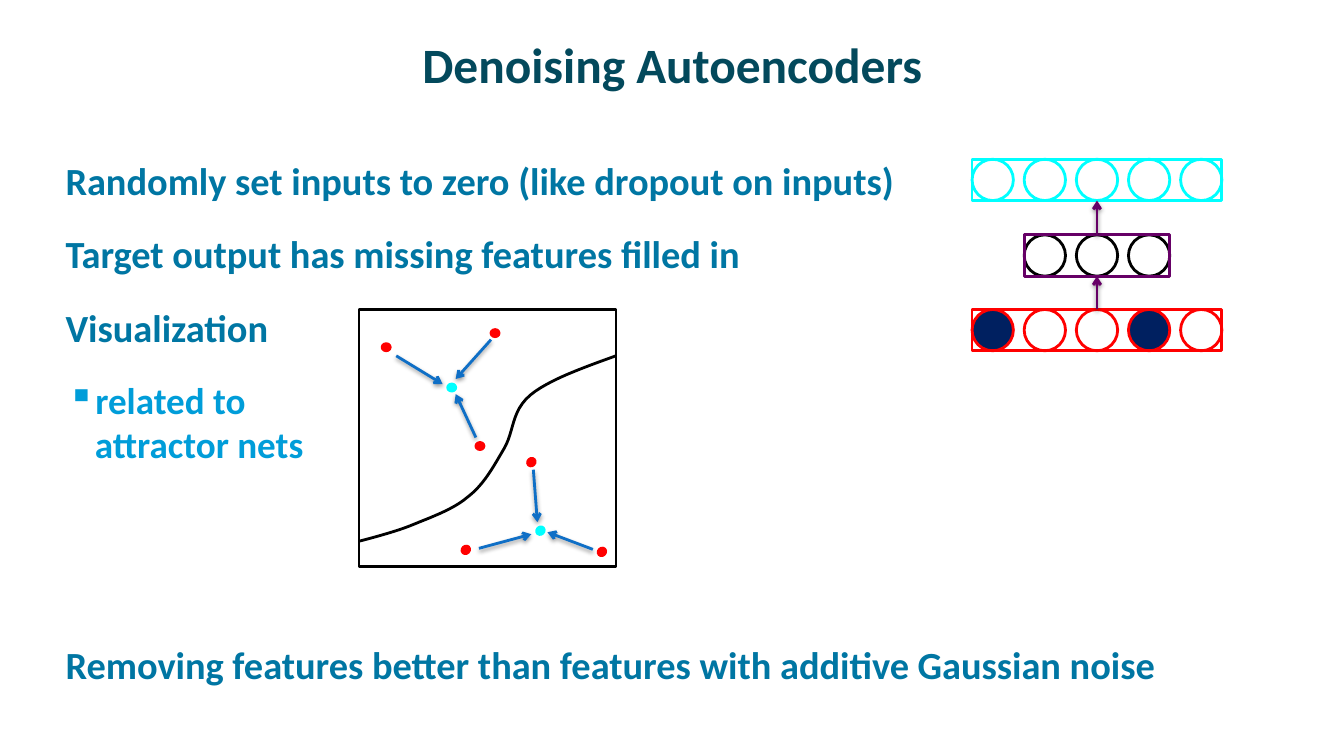
from lxml import etree
from pptx import Presentation
from pptx.dml.color import RGBColor
from pptx.enum import shapes, text
from pptx.oxml import ns
from pptx.util import Inches, Pt

TITLE = "Denoising Autoencoders"
HEADING, SUBPOINT = ("0076A3", 27.4), ("009DD9", 26.5)
# text, (colour, size), space before, bullet
POINTS = [
    ("Randomly set inputs to zero (like dropout on inputs)", HEADING, 0, None),
    ("Target output has missing features filled in", HEADING, 19.5, None),
    ("Visualization", HEADING, 19.5, None),
    ("related to\nattractor nets", SUBPOINT, 19.5, "▪"),
    ("Removing features better than features with additive Gaussian noise",
     HEADING, 125, None),
]

WHITE, BLACK, RED, CYAN = "FFFFFF", "000000", "FF0000", "00FFFF"
NAVY, PURPLE, BLUE = "002060", "660066", "0F6FC6"

PLOT = (3.56, 3.07, 2.55, 2.55)
BASINS = [
    {"attractor": (4.44, 3.81), "angle": 0,
     "noisy": [(4.72, 4.39), (4.87, 3.27), (3.79, 3.41)],
     "pulls": [((4.87, 3.37), (4.52, 3.76)), ((4.72, 4.34), (4.52, 3.91)),
               ((3.93, 3.53), (4.39, 3.81))]},
    {"attractor": (5.32, 5.23), "angle": -45,
     "noisy": [(5.93, 5.44), (5.23, 4.55), (4.58, 5.42)],
     "pulls": [((5.29, 4.66), (5.33, 5.18)), ((5.88, 5.45), (5.43, 5.28)),
               ((4.75, 5.44), (5.27, 5.3))]},
]
DOT = (0.08, 0.07)
BOUNDARY_START = (6.11, 3.53)
BOUNDARY_CURVES = [
    ((5.78, 3.65), (5.44, 3.77), (5.26, 3.92)),
    ((5.07, 4.08), (5.1, 4.28), (5, 4.45)),
    ((4.9, 4.62), (4.8, 4.81), (4.64, 4.93)),
    ((4.49, 5.06), (4.25, 5.14), (4.06, 5.22)),
    ((3.88, 5.29), (3.56, 5.37), (3.56, 5.37)),
]
CURVE_STEPS = 12

# top, unit line, box line, fills of the units
LAYERS = [
    (3.07, RED, RED, [NAVY, WHITE, WHITE, NAVY, WHITE]),
    (2.33, BLACK, PURPLE, [WHITE] * 3),
    (1.58, CYAN, CYAN, [WHITE] * 5),
]
NETWORK_CENTER, UNIT, UNIT_PITCH = 10.88, 0.41, 0.517


def rgb(hex_color):
    return RGBColor.from_string(hex_color)


def add_text(frame, content, color, size, first=False, before=0,
             left=0, hanging=0, bullet=None, align=text.PP_ALIGN.LEFT):
    """Add one paragraph; a line feed in content becomes a line break."""
    para = frame.paragraphs[0] if first else frame.add_paragraph()
    para.text = content
    para.alignment = align
    para.space_before = Pt(before)
    props = para._p.get_or_add_pPr()
    props.set("marL", str(Inches(left)))
    props.set("indent", str(Inches(-hanging)))
    if bullet:
        etree.SubElement(props, ns.qn("a:buChar")).set("char", bullet)
    for run in para.runs:
        run.font.name, run.font.size, run.font.bold = "Calibri", Pt(size), True
        run.font.color.rgb = rgb(color)


def add_frame(slide, box, anchor):
    frame = slide.shapes.add_textbox(*map(Inches, box)).text_frame
    frame.word_wrap = True
    frame.vertical_anchor = anchor
    frame.margin_left = frame.margin_right = Inches(0.11)
    frame.margin_top = frame.margin_bottom = Inches(0.06)
    return frame


def style(shape, line, fill=None):
    shape.shadow.inherit = False
    shape.line.color.rgb = rgb(line)
    shape.line.width = Pt(2)
    if fill:
        shape.fill.solid()
        shape.fill.fore_color.rgb = rgb(fill)
    else:
        shape.fill.background()


def add_outline(group, kind, box, line, fill=None, angle=0):
    shape = group.shapes.add_shape(kind, *map(Inches, box))
    style(shape, line, fill)
    shape.rotation = angle


def add_arrow(group, start, end, color):
    """Add an arrow that keeps the theme's soft connector shadow."""
    arrow = group.shapes.add_connector(
        shapes.MSO_CONNECTOR.STRAIGHT, *map(Inches, start + end))
    arrow.line.color.rgb = rgb(color)
    arrow.line.width = Pt(2)
    tip = etree.SubElement(arrow.line._get_or_add_ln(), ns.qn("a:tailEnd"))
    tip.set("type", "arrow")


def curve_points(start, curves):
    """Yield points along a chain of cubic Bezier curves."""
    for a, b, end in curves:
        for step in range(1, CURVE_STEPS + 1):
            t = step / CURVE_STEPS
            s = 1 - t
            yield tuple(
                Inches(s**3 * p + 3 * s * s * t * q + 3 * s * t * t * r + t**3 * e)
                for p, q, r, e in zip(start, a, b, end))
        start = end


def draw_attractors(slide):
    group = slide.shapes.add_group_shape()
    oval = shapes.MSO_SHAPE.OVAL
    add_outline(group, shapes.MSO_SHAPE.RECTANGLE, PLOT, BLACK, WHITE)
    for basin in BASINS:
        angle = basin["angle"]
        add_outline(group, oval, basin["attractor"] + DOT, CYAN, CYAN, angle)
        for noisy in basin["noisy"]:
            add_outline(group, oval, noisy + DOT, RED, RED, angle)
        for start, end in basin["pulls"]:
            add_arrow(group, start, end, BLUE)
    builder = group.shapes.build_freeform(*map(Inches, BOUNDARY_START))
    builder.add_line_segments(
        list(curve_points(BOUNDARY_START, BOUNDARY_CURVES)), close=False)
    style(builder.convert_to_shape(), BLACK)


def draw_network(slide):
    group = slide.shapes.add_group_shape()
    for top, unit_line, box_line, fills in LAYERS:
        width = (len(fills) - 1) * UNIT_PITCH + UNIT
        left = NETWORK_CENTER - width / 2
        for i, fill in enumerate(fills):
            unit = (left + i * UNIT_PITCH, top, UNIT, UNIT)
            add_outline(group, shapes.MSO_SHAPE.OVAL, unit, unit_line, fill)
        add_outline(group, shapes.MSO_SHAPE.RECTANGLE,
                    (left, top, width, UNIT), box_line)
    for lower, upper in zip(LAYERS, LAYERS[1:]):
        add_arrow(group, (NETWORK_CENTER, lower[0]),
                  (NETWORK_CENTER, upper[0] + UNIT), PURPLE)


def main():
    deck = Presentation()
    deck.slide_width, deck.slide_height = Inches(13.33), Inches(7.5)
    slide = deck.slides.add_slide(deck.slide_layouts[6])

    title = add_frame(slide, (0.67, 0.17, 12, 0.92), text.MSO_ANCHOR.MIDDLE)
    add_text(title, TITLE, "03495C", 35.3, first=True,
             align=text.PP_ALIGN.CENTER)

    body = add_frame(slide, (0.44, 1.5, 12.22, 5.2), text.MSO_ANCHOR.TOP)
    for i, (content, (color, size), before, bullet) in enumerate(POINTS):
        left, hanging = (0.39, 0.27) if bullet else (0.1, 0)
        add_text(body, content, color, size, first=i == 0, before=before,
                 left=left, hanging=hanging, bullet=bullet)

    draw_attractors(slide)
    draw_network(slide)
    deck.save("out.pptx")


if __name__ == "__main__":
    main()
